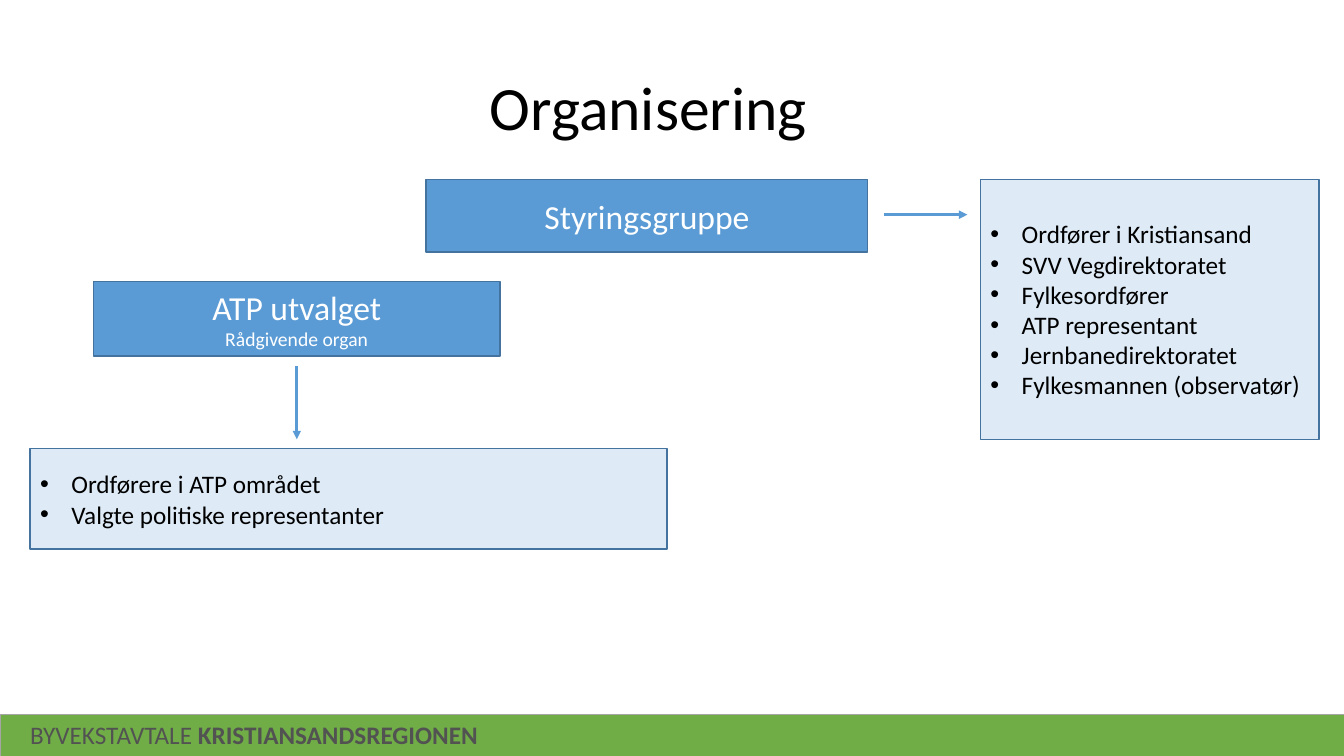
from lxml.etree import SubElement
from pptx import Presentation
from pptx.dml.color import RGBColor
from pptx.enum.shapes import MSO_CONNECTOR as Connector, MSO_SHAPE as Shape
from pptx.enum.text import MSO_ANCHOR as Anchor, MSO_AUTO_SIZE as AutoSize, PP_ALIGN as Align
from pptx.oxml.ns import qn
from pptx.util import Cm, Pt

COLOURS = {
    "text": "000000",
    "heading_text": "FFFFFF",
    "heading": "5B9BD5",
    "list": "DEEBF7",
    "outline": "43739E",
    "footer": "70AD47",
    "footer_line": "A5A5A5",
    "footer_text": "525252",
}
BULLET_INDENT = Cm(0.79)


def colour(name):
    return RGBColor.from_string(COLOURS[name])


def set_attributes(target, values):
    for name, value in values.items():
        setattr(target, name, value)


def add_run(paragraph, text, size, colour_name, bold=False):
    run = paragraph.add_run()
    run.text = text
    set_attributes(run.font, {"name": "Calibri", "size": Pt(size), "bold": bold})
    run.font.color.rgb = colour(colour_name)


def add_rectangle(slide, box, fill, line, line_width):
    shape = slide.shapes.add_shape(Shape.RECTANGLE, *map(Cm, box))
    shape.shadow.inherit = False
    shape.fill.solid()
    shape.fill.fore_color.rgb = colour(fill)
    shape.line.color.rgb = colour(line)
    shape.line.width = Pt(line_width)
    set_attributes(shape.text_frame, {"word_wrap": True, "vertical_anchor": Anchor.MIDDLE})
    return shape


def next_paragraph(frame, index):
    return frame.add_paragraph() if index else frame.paragraphs[0]


def add_heading(slide, box, lines):
    frame = add_rectangle(slide, box, "heading", "outline", 1).text_frame
    for index, (text, size) in enumerate(lines):
        paragraph = next_paragraph(frame, index)
        paragraph.alignment = Align.CENTER
        add_run(paragraph, text, size, "heading_text")


def add_member_list(slide, box, members):
    frame = add_rectangle(slide, box, "list", "outline", 1).text_frame
    for index, member in enumerate(members):
        paragraph = next_paragraph(frame, index)
        paragraph.alignment = Align.LEFT
        properties = paragraph._p.get_or_add_pPr()
        properties.set("marL", str(BULLET_INDENT))
        properties.set("indent", str(-BULLET_INDENT))
        SubElement(properties, qn("a:buFont"), typeface="Arial")
        SubElement(properties, qn("a:buChar"), char="•")
        add_run(paragraph, member, 18, "text")


def add_arrow(slide, start, end):
    arrow = slide.shapes.add_connector(Connector.STRAIGHT, *map(Cm, start + end))
    arrow.line.color.rgb = colour("heading")
    arrow.line.width = Pt(2)
    SubElement(arrow.line._get_or_add_ln(), qn("a:tailEnd"), type="triangle")
    SubElement(arrow._element.spPr, qn("a:effectLst"))


def place_title(slide, box, text):
    title = slide.shapes.title
    set_attributes(title, dict(zip(("left", "top", "width", "height"), map(Cm, box))))
    frame = title.text_frame
    set_attributes(frame, {
        "word_wrap": True,
        "vertical_anchor": Anchor.MIDDLE,
        "auto_size": AutoSize.NONE,
    })
    paragraph = frame.paragraphs[0]
    set_attributes(paragraph, {"alignment": Align.LEFT, "line_spacing": 0.9})
    add_run(paragraph, text, 44, "text")


def place_footer(slide, box):
    left, top, width, height = box
    add_rectangle(slide, box, "footer", "footer_line", 0.5)
    label = slide.shapes.add_textbox(Cm(left + 0.51), Cm(top), Cm(24.2), Cm(1.02))
    label.text_frame.word_wrap = True
    paragraph = label.text_frame.paragraphs[0]
    add_run(paragraph, "BYVEKSTAVTALE ", 18, "footer_text")
    add_run(paragraph, "KRISTIANSANDSREGIONEN", 18, "footer_text", bold=True)


def place_steering_group(slide, box):
    left, top, width, height = box
    heading_width, list_width = 11.13, 8.53
    list_left = left + width - list_width
    arrow_y = top + 0.89
    add_heading(slide, (left, top, heading_width, 1.83), [("Styringsgruppe", 24)])
    add_arrow(slide, (left + heading_width + 0.41, arrow_y), (list_left - 0.33, arrow_y))
    add_member_list(slide, (list_left, top, list_width, height), [
        "Ordfører i Kristiansand",
        "SVV Vegdirektoratet",
        "Fylkesordfører",
        "ATP representant",
        "Jernbanedirektoratet",
        "Fylkesmannen (observatør)",
    ])


def place_advisory_committee(slide, box):
    left, top, width, height = box
    heading_left, heading_width, heading_height = left + 1.6, 10.24, 1.88
    list_height = 2.54
    list_top = top + height - list_height
    arrow_x = heading_left + heading_width / 2
    add_heading(slide, (heading_left, top, heading_width, heading_height), [
        ("ATP utvalget", 24),
        ("Rådgivende organ", 14),
    ])
    add_arrow(slide, (arrow_x, top + heading_height + 0.25), (arrow_x, list_top - 0.23))
    add_member_list(slide, (left, list_top, width, list_height), [
        "Ordførere i ATP området",
        "Valgte politiske representanter",
    ])


def main():
    presentation = Presentation()
    presentation.slide_width = Cm(33.87)
    presentation.slide_height = Cm(19.05)
    slide = presentation.slides.add_slide(presentation.slide_layouts[5])
    place_title(slide, (12.09, 0.94, 9.7, 3.68), "Organisering")
    place_footer(slide, (0, 18, 33.87, 1.07))
    place_steering_group(slide, (10.74, 4.52, 22.5, 6.55))
    place_advisory_committee(slide, (0.76, 7.09, 16.05, 6.75))
    presentation.save("out.pptx")


if __name__ == "__main__":
    main()
